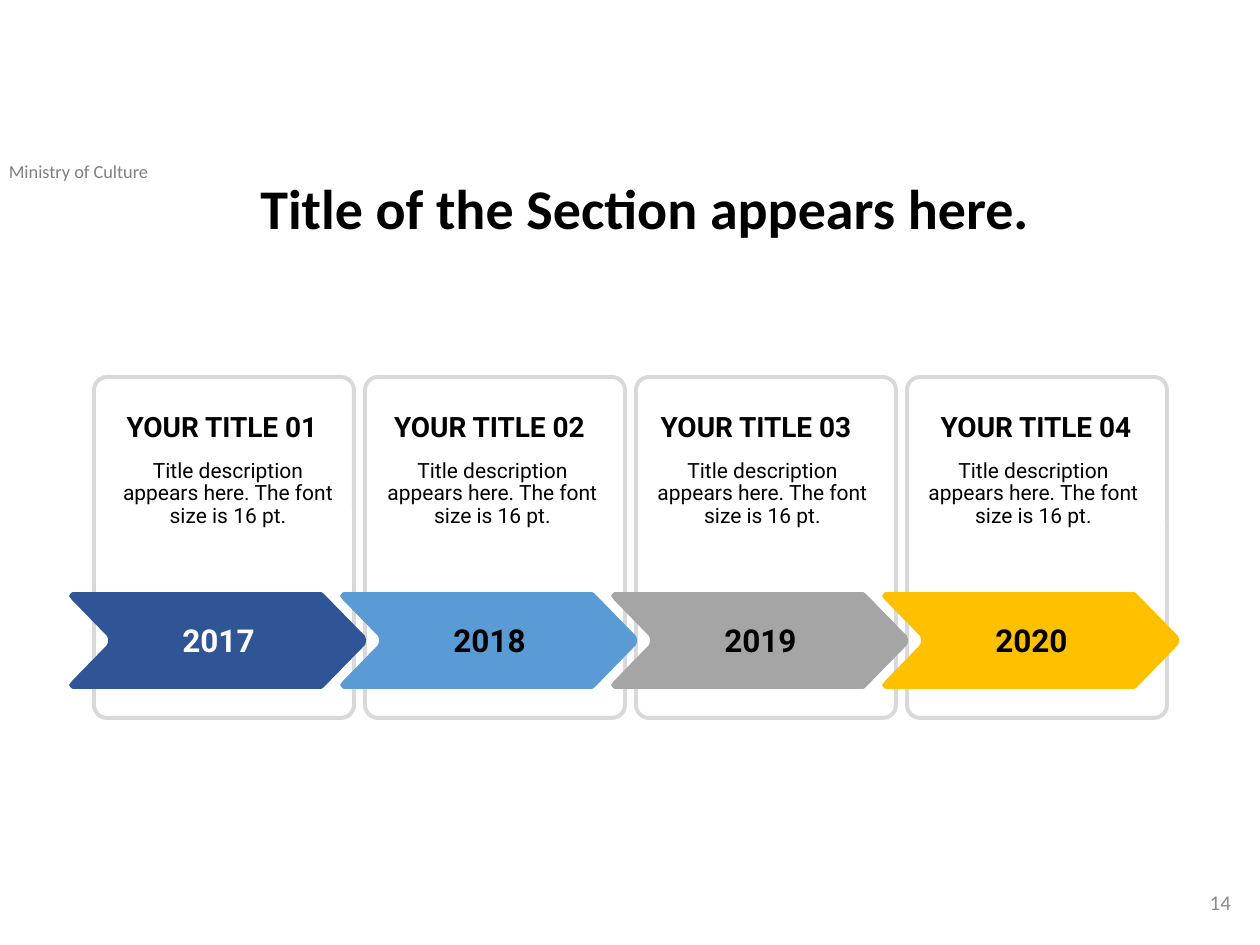
from lxml.etree import SubElement
from pptx import Presentation
from pptx.dml.color import RGBColor
from pptx.enum.shapes import MSO_SHAPE
from pptx.enum.text import MSO_ANCHOR, MSO_AUTO_SIZE, PP_ALIGN
from pptx.util import Emu, Pt

SCALE = 914400 / 126
BLACK = RGBColor(0x00, 0x00, 0x00)
WHITE = RGBColor(0xFF, 0xFF, 0xFF)
NAVY = RGBColor(0x2F, 0x55, 0x97)
BLUE = RGBColor(0x5B, 0x9B, 0xD5)
GRAY = RGBColor(0xA5, 0xA5, 0xA5)
GOLD = RGBColor(0xFF, 0xC0, 0x00)
FRAME_GRAY = RGBColor(0xD9, 0xD9, 0xD9)
HEADER_GRAY = RGBColor(0x80, 0x80, 0x80)
NUMBER_GRAY = RGBColor(0x8C, 0x8C, 0x8C)


def px(*lengths):
    return [Emu(round(length * SCALE)) for length in lengths]


def add_text(text, box, size, font, color=BLACK, bold=False, align=PP_ALIGN.CENTER,
             anchor=MSO_ANCHOR.TOP, grow=True, spacing=1.0, insets=(13, 6)):
    frame = slide.shapes.add_textbox(*px(*box)).text_frame
    frame.word_wrap = True
    frame.auto_size = MSO_AUTO_SIZE.SHAPE_TO_FIT_TEXT if grow else MSO_AUTO_SIZE.NONE
    frame.vertical_anchor = anchor
    frame.margin_left = frame.margin_right = px(insets[0])[0]
    frame.margin_top = frame.margin_bottom = px(insets[1])[0]
    paragraph = frame.paragraphs[0]
    paragraph.text = text
    paragraph.alignment = align
    paragraph.line_spacing = spacing
    paragraph.font.size = Pt(size)
    paragraph.font.name = font
    paragraph.font.bold = bold
    paragraph.font.color.rgb = color


prs = Presentation()
prs.slide_width, prs.slide_height = px(1260, 945)
slide = prs.slides.add_slide(prs.slide_layouts[6])

add_text("Ministry of Culture", (-4, 154, 275, 35), 10.5, "Calibri", HEADER_GRAY,
         align=PP_ALIGN.LEFT)
add_text("Title of the Section appears here.", (243, 175, 804, 100), 32, "Calibri",
         bold=True, grow=False, spacing=0.9)

STEP = 271
milestones = [
    ("2017", NAVY, WHITE, (103, 238), (111, 234)),
    ("2018", BLUE, BLACK, (375, 229), (381, 223)),
    ("2019", GRAY, BLACK, (639, 234), (651, 223)),
    ("2020", GOLD, BLACK, (917, 238), (922, 223)),
]

for i in range(len(milestones)):
    card = slide.shapes.add_shape(MSO_SHAPE.ROUNDED_RECTANGLE,
                                  *px(94 + i * STEP, 377, 260, 341))
    card.adjustments[0] = 0.05
    card.shadow.inherit = False
    card.fill.background()
    card.line.color.rgb = FRAME_GRAY
    card.line.width = Pt(2.25)

ARROW_HEIGHT = 97
upper_edge = [(39, 47), (38, 44), (3, 8), (0, 4), (2, 1), (4, 0),
              (252, 0), (254, 1), (296, 44), (297, 47)]
lower_edge = [(x, ARROW_HEIGHT - y) for x, y in reversed(upper_edge)]
outline = upper_edge + lower_edge

for i, (year, arrow_color, year_color, heading_span, description_span) in enumerate(milestones):
    points = [(69 + i * STEP + x, 592 + y) for x, y in outline]
    builder = slide.shapes.build_freeform(*points[0], scale=SCALE)
    builder.add_line_segments(points[1:], close=True)
    arrow = builder.convert_to_shape()
    arrow.shadow.inherit = False
    arrow.fill.solid()
    arrow.fill.fore_color.rgb = arrow_color
    arrow.line.fill.background()

for i, (year, arrow_color, year_color, heading_span, description_span) in enumerate(milestones):
    add_text(year, (166 + i * STEP, 615, 105, 50), 18, "Roboto", year_color, bold=True,
             anchor=MSO_ANCHOR.MIDDLE)
    left, width = description_span
    add_text("Title description appears here. The font size is 16 pt.",
             (left, 457, width, 73), 12, "Roboto", spacing=0.9, insets=(5, 3))
    left, width = heading_span
    add_text(f"YOUR TITLE {i + 1:02d}", (left, 402, width, 47), 16, "Roboto", bold=True,
             anchor=MSO_ANCHOR.BOTTOM)

add_text("14", (960, 877, 284, 50), 12, "Calibri", NUMBER_GRAY, align=PP_ALIGN.RIGHT,
         anchor=MSO_ANCHOR.MIDDLE, grow=False)

prs.save("out.pptx")
